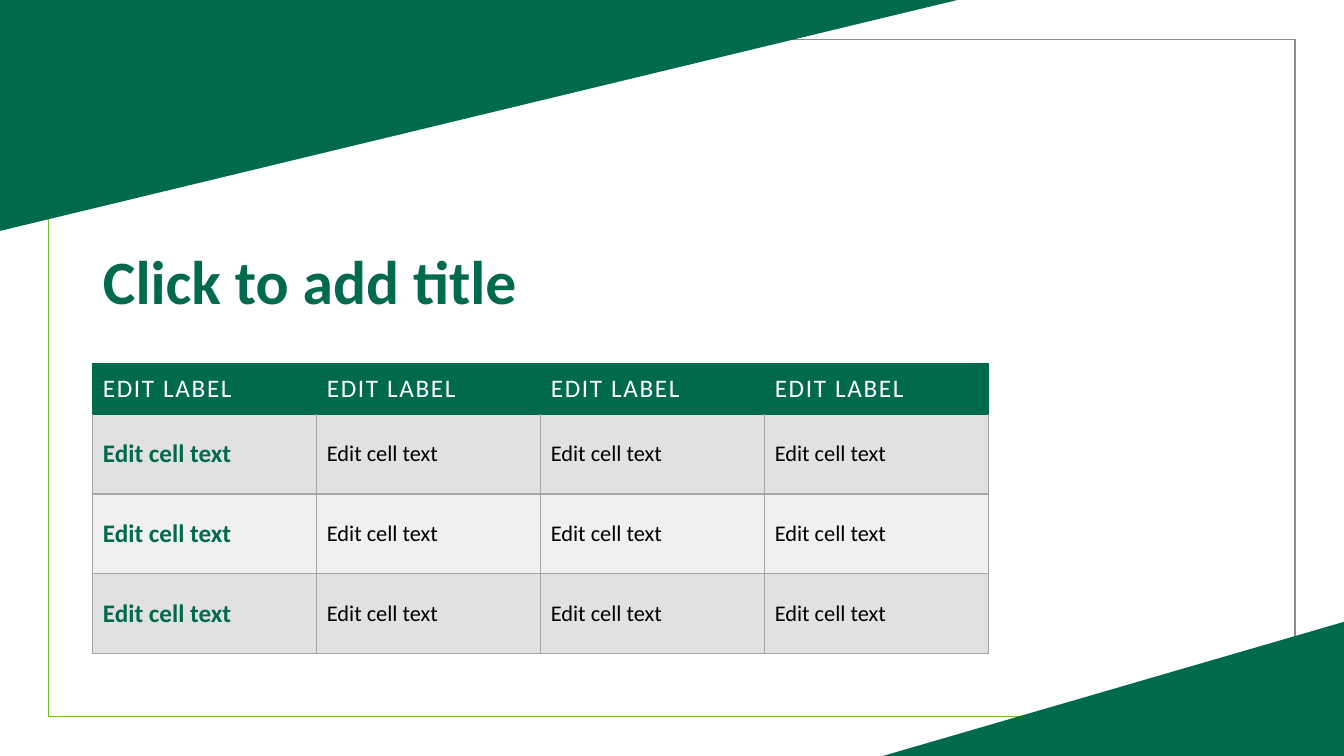
from dataclasses import dataclass

from lxml.etree import SubElement
from pptx import Presentation
from pptx.dml.color import RGBColor
from pptx.enum.shapes import MSO_SHAPE
from pptx.enum.text import MSO_ANCHOR, PP_ALIGN
from pptx.oxml.ns import qn
from pptx.util import Cm, Pt


@dataclass(frozen=True)
class Theme:
    font: str = "Calibri"
    green: str = "006A4D"
    row_label: str = "00694E"
    lime: str = "69BE28"
    frame_grey: str = "8C8C8C"
    rule: str = "A5A5A5"
    dark_band: str = "E1E1E1"
    light_band: str = "F0F0F0"
    white: str = "FFFFFF"
    black: str = "000000"
    title_size: int = 44
    label_size: int = 18
    cell_size: int = 16


theme = Theme()


def write(frame, text, *, size, color, bold=False, tracking=0, line_spacing=None):
    frame.word_wrap = True
    paragraph = frame.paragraphs[0]
    paragraph.alignment = PP_ALIGN.LEFT
    if line_spacing:
        paragraph.line_spacing = line_spacing
    run = paragraph.add_run()
    run.text = text
    run.font.name = theme.font
    run.font.size = Pt(size)
    run.font.bold = bold
    run.font.color.rgb = RGBColor.from_string(color)
    if tracking:
        run.font._element.set("spc", str(round(tracking * 100)))


def set_borders(cell, colors):
    properties = cell._tc.get_or_add_tcPr()
    for side, color in zip("LRTB", colors):
        border = SubElement(properties, qn(f"a:ln{side}"), w=str(Pt(1)))
        fill = SubElement(border, qn("a:solidFill"))
        SubElement(fill, qn("a:srgbClr"), val=color)


presentation = Presentation()
presentation.slide_width = Cm(33.87)
presentation.slide_height = Cm(19.05)
slide = presentation.slides.add_slide(presentation.slide_layouts[5])

left, top, width, height = Cm(1.22), Cm(0.99), Cm(31.42), Cm(17.07)
frame = slide.shapes.add_shape(MSO_SHAPE.RECTANGLE, left, top, width, height)
frame.shadow.inherit = False
frame.fill.background()
frame.line.color.rgb = RGBColor.from_string(theme.lime)
frame.line.width = Pt(1)

corner_outline = slide.shapes.build_freeform(left, top)
corner_outline.add_line_segments(
    [(left + width, top), (left + width, top + height)], close=False
)
frame_corner = corner_outline.convert_to_shape()
frame_corner.shadow.inherit = False
frame_corner.fill.background()
frame_corner.line.color.rgb = RGBColor.from_string(theme.frame_grey)
frame_corner.line.width = Pt(1)

wedges = [
    [(0, 0), (24.13, 0), (0, 5.82)],
    [(33.87, 19.05), (22.25, 19.05), (33.87, 15.67)],
]
for corners in wedges:
    start, *others = [(Cm(x), Cm(y)) for x, y in corners]
    outline = slide.shapes.build_freeform(*start)
    outline.add_line_segments(others)
    wedge = outline.convert_to_shape()
    wedge.shadow.inherit = False
    wedge.fill.solid()
    wedge.fill.fore_color.rgb = RGBColor.from_string(theme.green)
    wedge.line.fill.background()

title = slide.shapes.title
title.left, title.top, title.width, title.height = Cm(2.34), Cm(6.05), Cm(29.21), Cm(2.24)
title.text_frame.vertical_anchor = MSO_ANCHOR.MIDDLE
write(title.text_frame, "Click to add title", size=theme.title_size,
      color=theme.green, bold=True, line_spacing=0.9)

labels = ["EDIT LABEL"] * 4
body = [["Edit cell text"] * 4 for _ in range(3)]
grid = slide.shapes.add_table(
    len(body) + 1, len(labels), Cm(2.34), Cm(9.17), Cm(22.58), Cm(7.3)
).table
for column in grid.columns:
    column.width = Cm(5.645)
for index, row in enumerate(grid.rows):
    row.height = Cm(2.01) if index else Cm(1.27)

for row_index, texts in enumerate([labels, *body]):
    for column_index, text in enumerate(texts):
        cell = grid.cell(row_index, column_index)
        cell.vertical_anchor = MSO_ANCHOR.MIDDLE
        if row_index == 0:
            band, borders = theme.green, [theme.green] * 4
            style = dict(size=theme.label_size, color=theme.white, tracking=1.2)
        else:
            band = theme.dark_band if row_index % 2 else theme.light_band
            upper = theme.green if row_index == 1 else theme.rule
            borders = [theme.rule, theme.rule, upper, theme.rule]
            style = dict(size=theme.cell_size, color=theme.black)
            if column_index == 0:
                style = dict(size=theme.label_size, color=theme.row_label, bold=True)
        set_borders(cell, borders)
        cell.fill.solid()
        cell.fill.fore_color.rgb = RGBColor.from_string(band)
        write(cell.text_frame, text, **style)

presentation.save("out.pptx")
